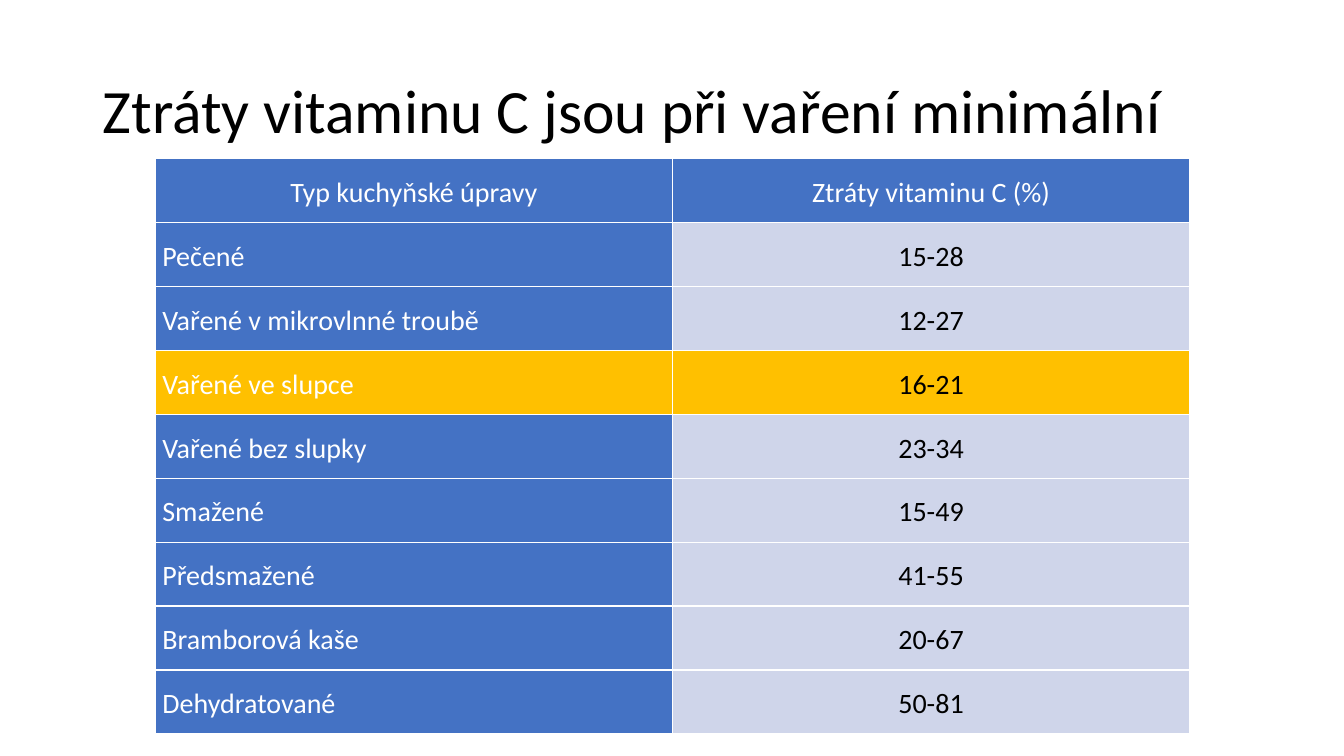
from pptx import Presentation
from pptx.dml.color import RGBColor
from pptx.enum.text import MSO_ANCHOR, PP_ALIGN
from pptx.oxml.ns import qn
from pptx.util import Inches, Pt
from lxml.etree import SubElement

BLACK = RGBColor(0x00, 0x00, 0x00)
WHITE = RGBColor(0xFF, 0xFF, 0xFF)
BLUE = RGBColor(0x44, 0x72, 0xC4)
PALE_BLUE = RGBColor(0xCF, 0xD5, 0xEA)
GOLD = RGBColor(0xFF, 0xC0, 0x00)

HIGHLIGHTED = "Vařené ve slupce"
ROWS = [
    ("Typ kuchyňské úpravy", "Ztráty vitaminu C (%)"),
    ("Pečené", "15-28"),
    ("Vařené v mikrovlnné troubě", "12-27"),
    (HIGHLIGHTED, "16-21"),
    ("Vařené bez slupky", "23-34"),
    ("Smažené", "15-49"),
    ("Předsmažené", "41-55"),
    ("Bramborová kaše", "20-67"),
    ("Dehydratované", "50-81"),
]
ROW_HEIGHT = 0.635


def add_run(p, text, size, color):
    r = p.add_run()
    r.text = text
    r.font.name = "Calibri"
    r.font.size = Pt(size)
    r.font.color.rgb = color


def set_borders(cell, color, width):
    tcPr = cell._tc.get_or_add_tcPr()
    for i, side in enumerate(("a:lnL", "a:lnR", "a:lnT", "a:lnB")):
        ln = tcPr.makeelement(qn(side), {"w": str(Pt(width))})
        fill = SubElement(ln, qn("a:solidFill"))
        SubElement(fill, qn("a:srgbClr"), val=str(color))
        tcPr.insert(i, ln)  # borders must precede the cell fill


prs = Presentation()
prs.slide_width, prs.slide_height = Inches(13.33), Inches(7.5)
s = prs.slides.add_slide(prs.slide_layouts[6])

title = s.shapes.add_textbox(Inches(0.92), Inches(0.4), Inches(11.5), Inches(1.45))
tf = title.text_frame
tf.word_wrap = True
tf.vertical_anchor = MSO_ANCHOR.MIDDLE
p = tf.paragraphs[0]
p.line_spacing = 0.9
add_run(p, "Ztráty vitaminu C jsou při vaření minimální", 44, BLACK)

table = s.shapes.add_table(len(ROWS), 2, Inches(1.54), Inches(1.57),
                           Inches(10.26), Inches(ROW_HEIGHT * len(ROWS))).table

for i, row in enumerate(ROWS):
    table.rows[i].height = Inches(ROW_HEIGHT)
    for j, text in enumerate(row):
        is_header = i == 0
        is_label = j == 0
        cell = table.cell(i, j)
        cell.margin_left = cell.margin_right = Inches(0.07)
        cell.margin_top = cell.margin_bottom = 0

        cell.fill.solid()
        if row[0] == HIGHLIGHTED:
            cell.fill.fore_color.rgb = GOLD
        else:
            cell.fill.fore_color.rgb = BLUE if is_header or is_label else PALE_BLUE
        set_borders(cell, WHITE, 1)

        p = cell.text_frame.paragraphs[0]
        p.alignment = PP_ALIGN.LEFT if is_label and not is_header else PP_ALIGN.CENTER
        p.line_spacing = 1.5
        p.space_after = Pt(8)
        add_run(p, text, 20, WHITE if is_header or is_label else BLACK)

prs.save("out.pptx")
